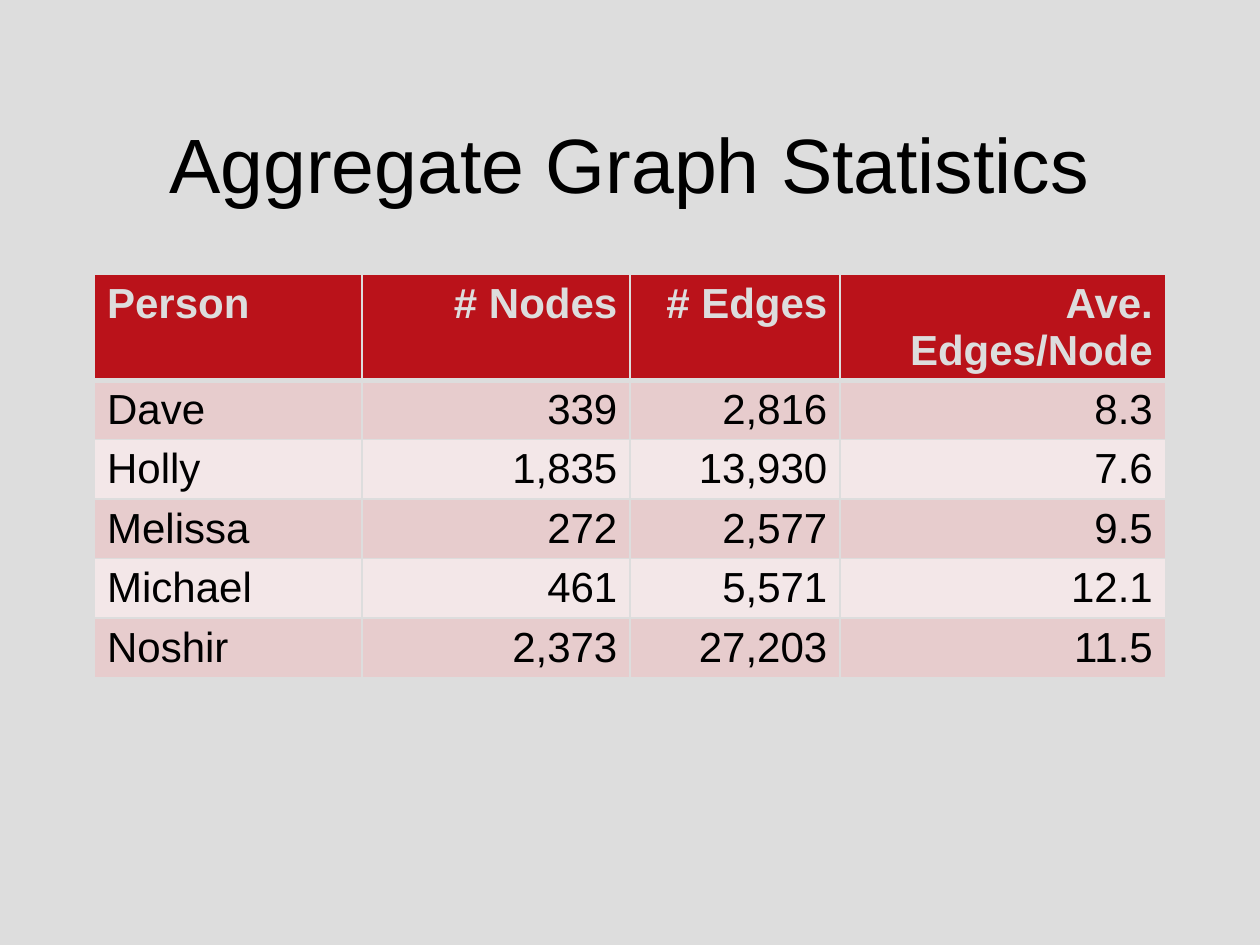
from pptx import Presentation
from pptx.dml.color import RGBColor
from pptx.enum.text import MSO_ANCHOR, PP_ALIGN
from pptx.oxml import parse_xml
from pptx.oxml.ns import nsdecls
from pptx.util import Pt

TITLE = "Aggregate Graph Statistics"
ROWS = [
    ("Person", "# Nodes", "# Edges", "Ave. Edges/Node"),
    ("Dave", "339", "2,816", "8.3"),
    ("Holly", "1,835", "13,930", "7.6"),
    ("Melissa", "272", "2,577", "9.5"),
    ("Michael", "461", "5,571", "12.1"),
    ("Noshir", "2,373", "27,203", "11.5"),
]
COLUMN_WIDTHS = [153, 153, 120, 186]
ROW_HEIGHT = 29.2
LEFT = 54
COLORS = {
    "background": "DDDDDD",
    "header": "BA121A",
    "odd": "E7CCCD",
    "even": "F3E7E8",
    "text": "000000",
}
FONT = "Arial"


def color(name):
    return RGBColor.from_string(COLORS[name])


def add_text(paragraph, text, size, color_name, alignment, bold=False):
    paragraph.alignment = alignment
    run = paragraph.add_run()
    run.text = text
    run.font.name = FONT
    run.font.size = Pt(size)
    run.font.bold = bold
    run.font.color.rgb = color(color_name)


def set_borders(cell, widths):
    properties = cell._tc.get_or_add_tcPr()
    for position, (side, width) in enumerate(widths.items()):
        border = parse_xml(
            f'<a:{side} {nsdecls("a")} w="{Pt(width)}"><a:solidFill>'
            f'<a:srgbClr val="{COLORS["background"]}"/></a:solidFill></a:{side}>'
        )
        properties.insert(position, border)


def add_title(slide):
    title = slide.shapes.title
    title.left, title.top, title.width, title.height = Pt(LEFT), Pt(48), Pt(612), Pt(90)
    frame = title.text_frame
    frame.word_wrap = True
    frame.vertical_anchor = MSO_ANCHOR.MIDDLE
    add_text(frame.paragraphs[0], TITLE, 44, "text", PP_ALIGN.CENTER)


def add_statistics(slide):
    table = slide.shapes.add_table(
        len(ROWS), len(COLUMN_WIDTHS), Pt(LEFT), Pt(156.5),
        Pt(sum(COLUMN_WIDTHS)), Pt(ROW_HEIGHT * len(ROWS)),
    ).table
    for column, width in zip(table.columns, COLUMN_WIDTHS):
        column.width = Pt(width)
    for row_index, values in enumerate(ROWS):
        table.rows[row_index].height = Pt(ROW_HEIGHT)
        is_header = row_index == 0
        fill = "header" if is_header else ("even", "odd")[row_index % 2]
        text_color = "background" if is_header else "text"
        borders = {
            "lnL": 1,
            "lnR": 1,
            "lnT": 3 if row_index == 1 else 1,
            "lnB": 3 if is_header else 1,
        }
        for column_index, value in enumerate(values):
            cell = table.cell(row_index, column_index)
            cell.fill.solid()
            cell.fill.fore_color.rgb = color(fill)
            set_borders(cell, borders)
            alignment = PP_ALIGN.RIGHT if column_index else PP_ALIGN.LEFT
            add_text(cell.text_frame.paragraphs[0], value, 24, text_color,
                     alignment, is_header)


def main():
    presentation = Presentation()
    presentation.slide_width, presentation.slide_height = Pt(720), Pt(540)
    slide = presentation.slides.add_slide(presentation.slide_layouts[5])
    slide.background.fill.solid()
    slide.background.fill.fore_color.rgb = color("background")
    add_title(slide)
    add_statistics(slide)
    presentation.save("out.pptx")


if __name__ == "__main__":
    main()
